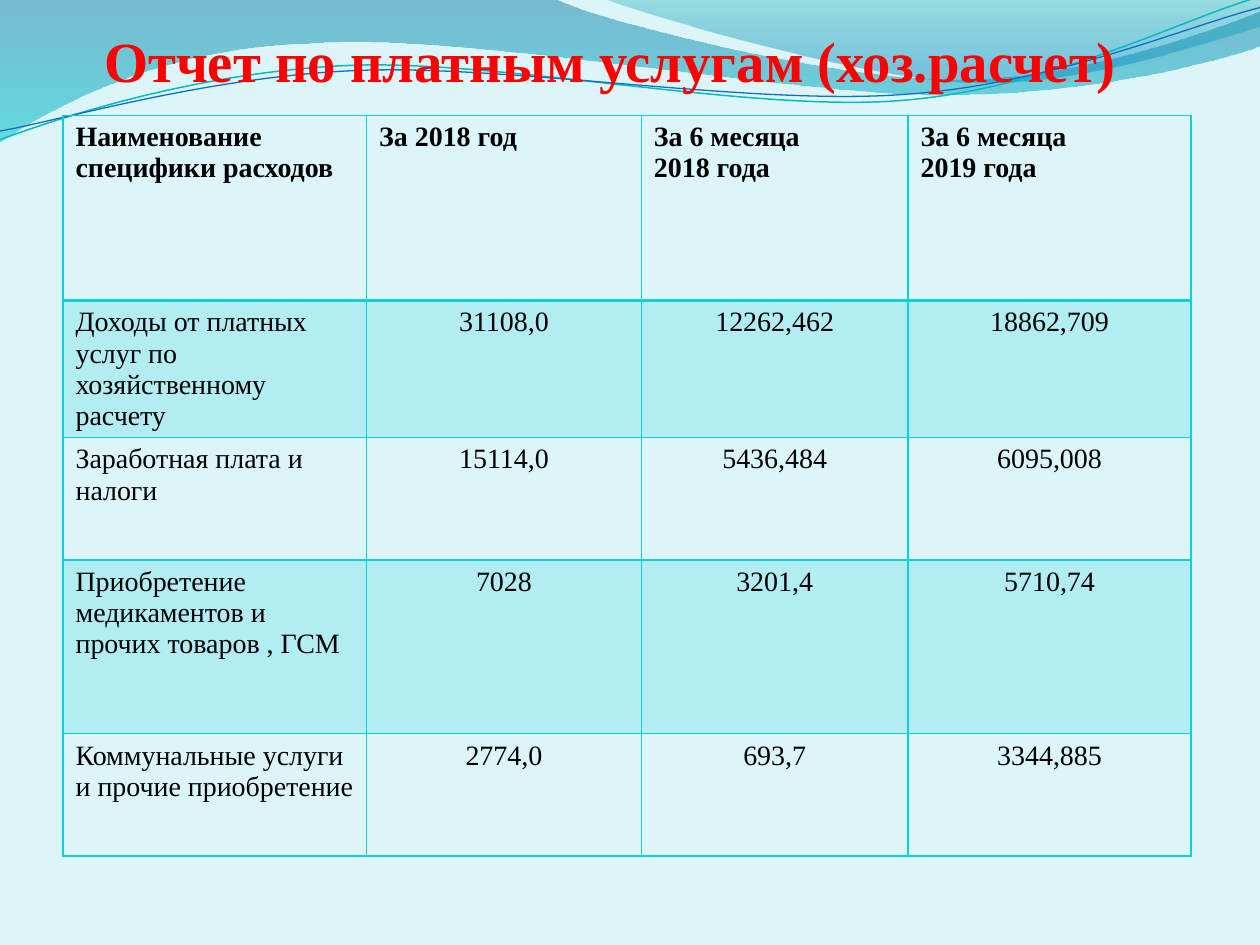
from lxml import etree
from pptx import Presentation
from pptx.dml.color import RGBColor
from pptx.enum.text import MSO_ANCHOR, PP_ALIGN
from pptx.oxml.ns import qn
from pptx.util import Pt

LEFT, CENTER = PP_ALIGN.LEFT, PP_ALIGN.CENTER
TOP = MSO_ANCHOR.TOP
FONT = "Times New Roman"
TITLE_ONLY = 5
COLORS = {
    "background": "DBF5F9", "title": "FF0000", "text": "000000", "accent": "0BD0D9",
    "left_top": "0074A1", "left_bottom": "00C6CF",
    "right_top": "00A1A9", "right_bottom": "008BBF",
    "teal_line": "0AB8BF", "blue_line": "0F6FC6",
}

LEFT_WAVE = [
    (0, 0), (4.4, -0.01),
    (4.76, 0.17, 6.64, 0.63, 7.58, 0.63), (8.53, 0.63, 9.58, 0.26, 10, 0.09),
    (10.01, 0.36),
    (9.83, 0.44, 8.7, 0.76, 7.46, 0.75), (6.22, 0.75, 3.82, 0.28, 2.57, 0.34),
    (1.29, 0.36, 0.46, 0.83, -0.01, 1.13),
]
RIGHT_WAVE = [
    (4.79, -0.01), (5.09, 0.11, 6.82, 0.62, 7.69, 0.65),
    (8.56, 0.69, 9.61, 0.32, 10, 0.21), (10, 0),
]
TEAL_CURVE = [
    (0, 1.11), (0.48, 0.93, 1.58, 0.57, 2.77, 0.52),
    (3.95, 0.47, 5.93, 0.89, 7.13, 0.8), (8.33, 0.71, 9.38, 0.15, 9.98, -0.02),
]
BLUE_CURVE = [
    (0, 1.04), (0.47, 0.96, 1.64, 0.61, 2.83, 0.56),
    (4.03, 0.51, 5.97, 0.84, 7.17, 0.75), (8.36, 0.67, 9.41, 0.21, 10, 0.06),
]

COLUMN_WIDTHS = [173.5, 157, 152.4, 161.8]
ROW_HEIGHTS = [105.8, 63.4, 69.8, 99.4, 69.8]
ROWS = [
    ["Наименование специфики расходов", "За 2018 год",
     "За 6 месяца\n2018 года", "За 6 месяца\n2019 года"],
    ["Доходы от платных услуг по хозяйственному расчету", "31108,0", "12262,462", "18862,709"],
    ["Заработная плата и налоги", "15114,0", "5436,484", "6095,008"],
    ["Приобретение медикаментов и прочих товаров , ГСМ", "7028", "3201,4", "5710,74"],
    ["Коммунальные услуги и прочие приобретение", "2774,0", "693,7", "3344,885"],
]


def color(name):
    """Return the named palette colour."""
    return RGBColor.from_string(COLORS[name])


def set_alpha(color_element, percent):
    """Give a colour element an opacity in percent."""
    etree.SubElement(color_element, qn("a:alpha")).set("val", str(percent * 1000))


def add_path(slide, origin, unit, path, closed):
    """Add a freeform of lines and Bezier segments, measured in units from the origin."""
    left, top = origin
    segments = [
        [(Pt(left + x * unit), Pt(top + y * unit)) for x, y in zip(numbers[::2], numbers[1::2])]
        for numbers in path
    ]
    builder = slide.shapes.build_freeform(*segments[0][-1])
    builder.add_line_segments([points[-1] for points in segments[1:]], close=closed)
    shape = builder.convert_to_shape()
    shape.shadow.inherit = False
    lines = list(shape.element.iter(qn("a:lnTo")))
    for line, points in zip(lines, segments[1:]):
        if len(points) == 3:
            curve = etree.Element(qn("a:cubicBezTo"))
            for x, y in points:
                etree.SubElement(curve, qn("a:pt"), x=str(x - shape.left), y=str(y - shape.top))
            line.getparent().replace(line, curve)
    return shape


def add_waves(slide, left, top, width):
    """Draw the wave header across the given width."""
    origin, unit = (left, top), width / 10
    for path, stops in (
        (LEFT_WAVE, [(0, "left_top", 45), (1, "left_bottom", 55)]),
        (RIGHT_WAVE, [(0, "right_top", 30), (0.8, "right_bottom", 45)]),
    ):
        wave = add_path(slide, origin, unit, path, True)
        wave.line.fill.background()
        wave.fill.gradient()
        wave.fill.gradient_angle = 270
        for stop, (position, name, _) in zip(wave.fill.gradient_stops, stops):
            stop.position = position
            stop.color.rgb = color(name)
        elements = wave.element.spPr.iter(qn("a:srgbClr"))
        for element, (_, _, opacity) in zip(elements, stops):
            set_alpha(element, opacity)
    for path, name, weight in (
        (TEAL_CURVE, "teal_line", 0.85), (BLUE_CURVE, "blue_line", 0.75),
    ):
        curve = add_path(slide, origin, unit, path, False)
        curve.fill.background()
        curve.line.color.rgb = color(name)
        curve.line.width = Pt(weight)


def add_run(paragraph, text, size, name, bold):
    """Append a formatted run to a paragraph."""
    run = paragraph.add_run()
    run.text = text
    run.font.name = FONT
    run.font.size = Pt(size)
    run.font.bold = bold
    run.font.color.rgb = color(name)


def add_title(slide, left, top, width, height):
    """Place the title placeholder in its box, in front of the waves."""
    title = slide.shapes.title
    title.left, title.top, title.width, title.height = map(Pt, (left, top, width, height))
    slide.shapes.element.append(title.element)
    frame = title.text_frame
    frame.word_wrap = True
    frame.vertical_anchor = TOP
    frame.margin_left = frame.margin_right = frame.margin_top = frame.margin_bottom = 0
    paragraph = frame.paragraphs[0]
    paragraph.alignment = LEFT
    add_run(paragraph, "Отчет по платным услугам (хоз.расчет)", 32.4, "title", True)


def set_borders(cell, weights):
    """Draw cell borders from a mapping of side to weight."""
    properties = cell._tc.get_or_add_tcPr()
    for side, weight in weights.items():
        line = etree.SubElement(properties, qn(f"a:ln{side}"), w=str(Pt(weight)))
        fill = etree.SubElement(line, qn("a:solidFill"))
        etree.SubElement(fill, qn("a:srgbClr"), val=COLORS["accent"])


def fill_cell(cell, text, row, column):
    """Write and format one table cell."""
    header = row == 0
    set_borders(cell, {"L": 1, "R": 1, "T": 2 if row == 1 else 1, "B": 2 if header else 1})
    if row % 2:
        cell.fill.solid()
        cell.fill.fore_color.rgb = color("accent")
        set_alpha(cell._tc.tcPr.find(qn("a:solidFill"))[0], 20)
    else:
        cell.fill.background()
    frame = cell.text_frame
    for index, line in enumerate(text.split("\n")):
        paragraph = frame.add_paragraph() if index else frame.paragraphs[0]
        paragraph.alignment = LEFT if header or column == 0 else CENTER
        add_run(paragraph, line, 16, "text", header)


def add_report_table(slide, left, top):
    """Add the income and expense table at the given corner."""
    frame = slide.shapes.add_table(
        len(ROWS), len(COLUMN_WIDTHS), Pt(left), Pt(top),
        Pt(sum(COLUMN_WIDTHS)), Pt(sum(ROW_HEIGHTS)))
    table = frame.table
    for column, width in zip(table.columns, COLUMN_WIDTHS):
        column.width = Pt(width)
    for row, height in zip(table.rows, ROW_HEIGHTS):
        row.height = Pt(height)
    for row, texts in enumerate(ROWS):
        for column, text in enumerate(texts):
            fill_cell(table.cell(row, column), text, row, column)


def main():
    """Build and save the presentation."""
    presentation = Presentation()
    presentation.slide_width, presentation.slide_height = Pt(720), Pt(540)
    slide = presentation.slides.add_slide(presentation.slide_layouts[TITLE_ONLY])
    slide.background.fill.solid()
    slide.background.fill.fore_color.rgb = color("background")
    add_waves(slide, 0, 0, 720)
    add_title(slide, 59.5, 15, 635, 72)
    add_report_table(slide, 36, 66)
    presentation.save("out.pptx")


if __name__ == "__main__":
    main()
